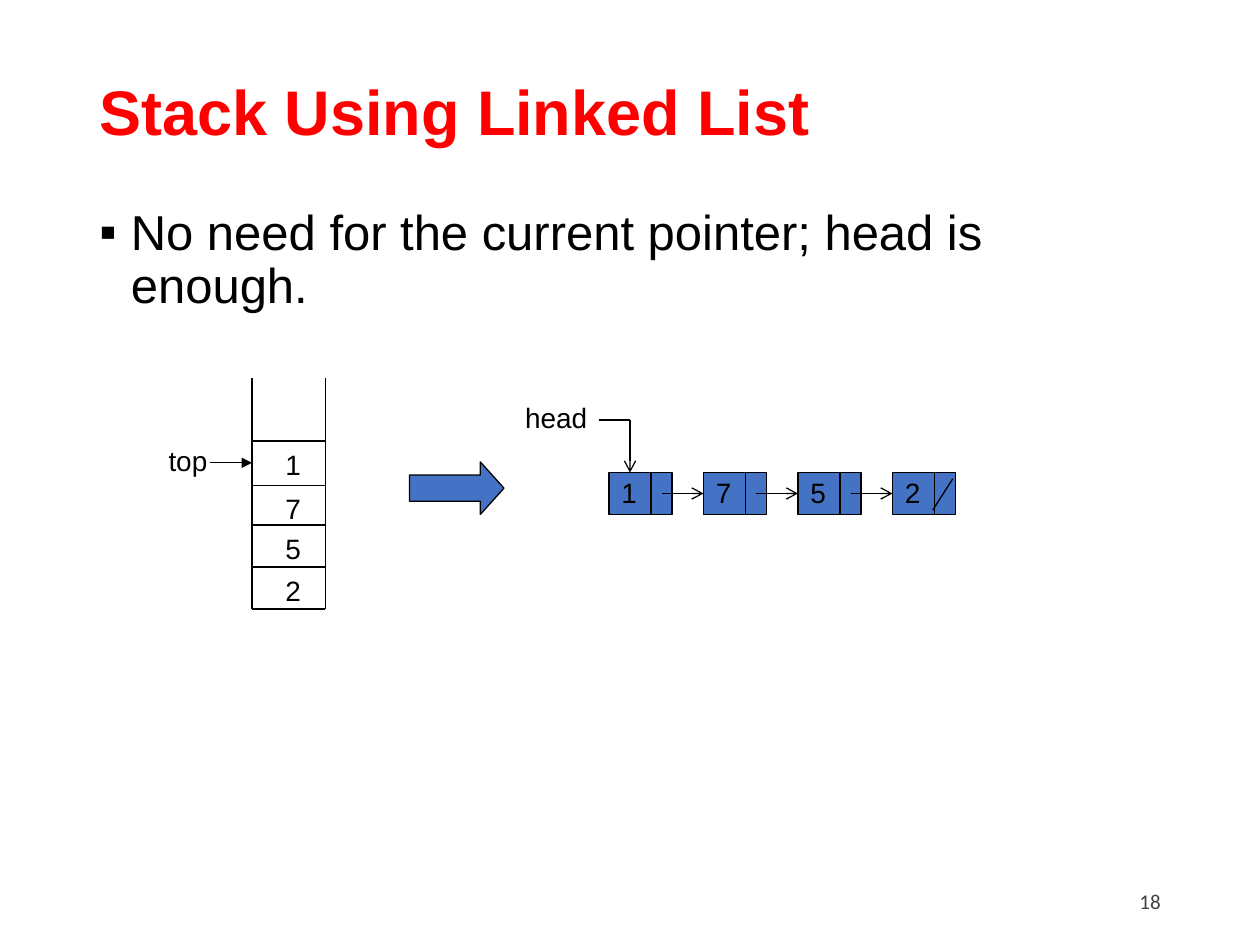
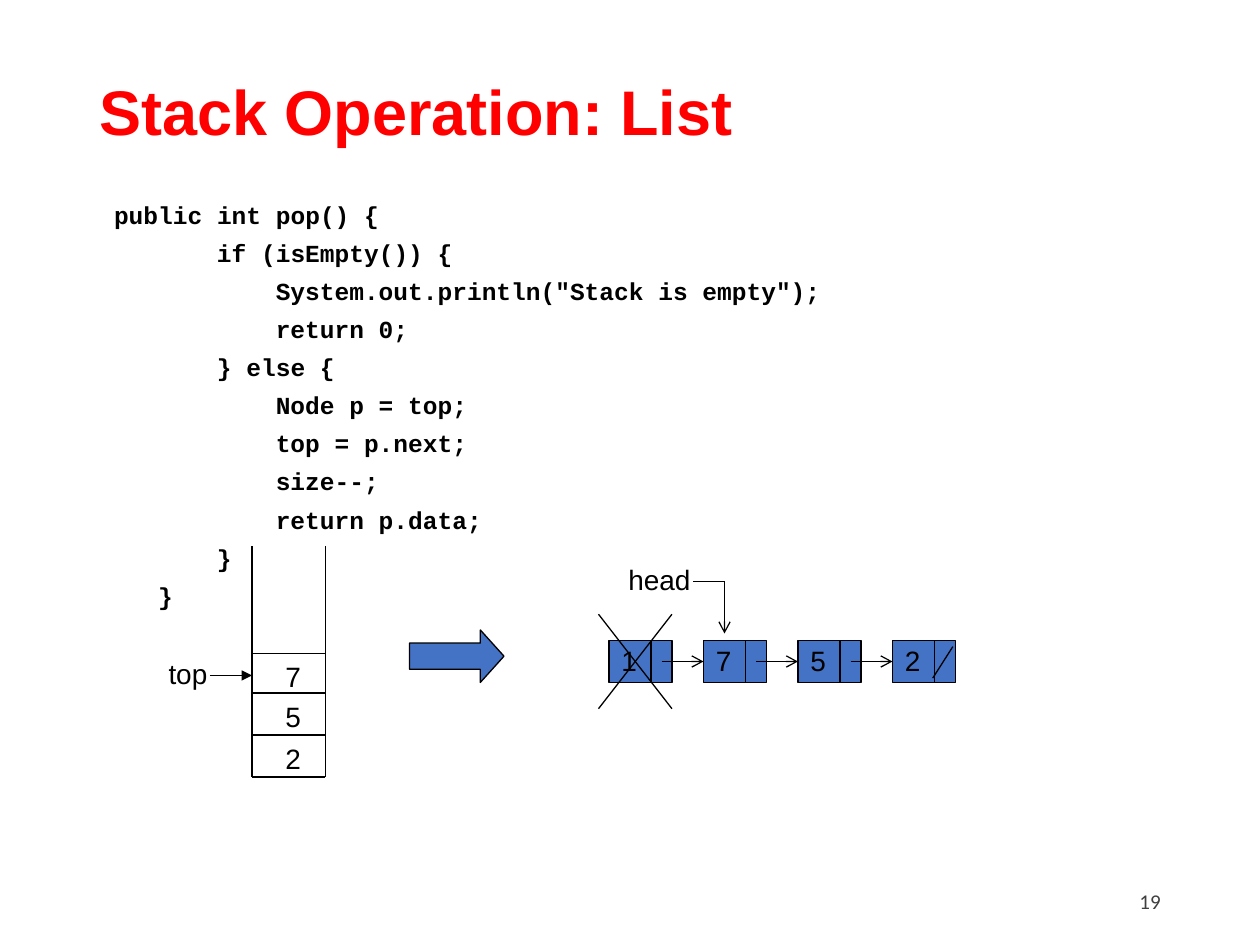
"""Builds two slides showing a stack and its linked list form."""
from lxml.etree import SubElement
from pptx import Presentation
from pptx.dml.color import RGBColor
from pptx.enum.shapes import MSO_CONNECTOR, MSO_SHAPE
from pptx.enum.text import MSO_ANCHOR, PP_ALIGN
from pptx.oxml.ns import qn
from pptx.util import Pt

COLORS = {"title": "FF0000", "ink": "000000", "node": "4472C4", "number": "404040"}
BODY_FONT, CODE_FONT, NUMBER_FONT = "Arial", "Courier New", "Calibri"

LIST_VALUES = ["1", "7", "5", "2"]
CELL_TOPS = {"1": 36, "7": 61.5, "5": 84, "2": 108}
STACK_LEFT, STACK_RIGHT, STACK_HEIGHT = 144, 186, 132
NODE_LEFT, NODE_STEP, NODE_WIDTH = 348, 54, 36
NODE_TOP, NODE_HEIGHT, NODE_SPLIT = 54, 24, 24
CODE_CHAR_WIDTH = 8.4

BULLET = "No need for the current pointer; head is enough."
CODE = [
    (1, "public int pop() {"),
    (8, "if (isEmpty()) {"),
    (12, 'System.out.println("Stack is empty");'),
    (12, "return 0;"),
    (8, "} else {"),
    (12, "Node p = top;"),
    (12, "top = p.next;"),
    (12, "size--;"),
    (12, "return p.data;"),
    (8, "}"),
    (4, "}"),
]
SLIDES = [
    {"title": "Stack Using Linked List", "number": "18", "bullet": BULLET,
     "diagram_top": 216, "popped": 0,
     "head": {"label_left": 293, "line_y": 24, "tip_y": 54}},
    {"title": "Stack Operation: List", "number": "19", "code": CODE,
     "diagram_top": 312, "popped": 1,
     "head": {"label_left": 352, "line_y": 20.5, "tip_y": 50}},
]


def color(name):
    return RGBColor.from_string(COLORS[name])


def add_box(page, left, top, width, height, anchor=MSO_ANCHOR.TOP, wrap=True):
    box = page.shapes.add_textbox(Pt(left), Pt(top), Pt(width), Pt(height))
    box.text_frame.word_wrap = wrap
    box.text_frame.vertical_anchor = anchor
    return box.text_frame


def write(para, text, size, font=BODY_FONT, ink="ink", bold=False, spacing=None):
    para.text = text
    para.font.size = Pt(size)
    para.font.name = font
    para.font.bold = bold
    para.font.color.rgb = color(ink)
    if spacing:
        para.line_spacing = spacing


def add_label(page, text, left, top, width=23.3):
    frame = add_box(page, left, top, width, 26.6, wrap=False)
    write(frame.paragraphs[0], text, 16)


def add_line(page, x1, y1, x2, y2, arrow=None):
    line = page.shapes.add_connector(
        MSO_CONNECTOR.STRAIGHT, Pt(x1), Pt(y1), Pt(x2), Pt(y2))
    line.line.color.rgb = color("ink")
    line.line.width = Pt(0.75)
    if arrow:
        SubElement(line.line._get_or_add_ln(), qn("a:tailEnd"), type=arrow)
    SubElement(line._element.spPr, qn("a:effectLst"))


def add_block(page, kind, left, top, width, height):
    block = page.shapes.add_shape(kind, Pt(left), Pt(top), Pt(width), Pt(height))
    block.shadow.inherit = False
    block.fill.solid()
    block.fill.fore_color.rgb = color("node")
    block.line.color.rgb = color("ink")
    block.line.width = Pt(0.75)
    return block


def add_bullet(frame, text):
    para = frame.paragraphs[0]
    write(para, text, 28, spacing=0.9)
    para.space_before = Pt(10)
    properties = para._p.get_or_add_pPr()
    properties.set("marL", str(Pt(18)))
    properties.set("indent", str(-Pt(18)))
    SubElement(properties, qn("a:buFont"), typeface=BODY_FONT)
    SubElement(properties, qn("a:buChar"), char="▪")


def add_code(frame, lines):
    for index, (column, text) in enumerate(lines):
        para = frame.add_paragraph() if index else frame.paragraphs[0]
        write(para, text, 14, CODE_FONT, bold=True, spacing=0.7)
        para.space_before = Pt(10)
        para._p.get_or_add_pPr().set("marL", str(Pt(column * CODE_CHAR_WIDTH)))


def add_stack(page, top, values):
    bottom = top + STACK_HEIGHT
    for x in (STACK_LEFT, STACK_RIGHT):
        add_line(page, x, top, x, bottom)
    add_line(page, STACK_LEFT, bottom, STACK_RIGHT, bottom)
    for value in values:
        y = top + CELL_TOPS[value]
        add_line(page, STACK_LEFT, y, STACK_RIGHT, y)
        add_label(page, value, 156, y)
    pointer_y = top + CELL_TOPS[values[0]] + 12.5
    add_label(page, "top", 89.2, pointer_y - 14.4, 36.7)
    add_line(page, 120, pointer_y, STACK_LEFT, pointer_y, "triangle")


def add_list(page, top):
    y = top + NODE_TOP
    middle = y + NODE_HEIGHT / 2
    for index, value in enumerate(LIST_VALUES):
        x = NODE_LEFT + index * NODE_STEP
        add_block(page, MSO_SHAPE.RECTANGLE, x, y, NODE_WIDTH, NODE_HEIGHT)
        add_line(page, x + NODE_SPLIT, y, x + NODE_SPLIT, y + NODE_HEIGHT)
        add_label(page, value, x, y - 2)
        if index < len(LIST_VALUES) - 1:
            add_line(page, x + 30, middle, x + NODE_STEP, middle, "arrow")
        else:
            add_line(page, x + 34.5, y + 3.5, x + 23, y + 21.5)


def add_head(page, top, first, head):
    x = NODE_LEFT + first * NODE_STEP
    y = top + head["line_y"]
    add_label(page, "head", head["label_left"], y - 14.4, 49.7)
    add_line(page, x - 6, y, x + 12, y)
    add_line(page, x + 12, y, x + 12, top + head["tip_y"], "arrow")


def add_cross(page, top, index):
    left = NODE_LEFT + index * NODE_STEP - 6
    right = left + NODE_WIDTH + 6
    add_line(page, right, top + 39, left, top + 93)
    add_line(page, left, top + 39, right, top + 93)


def add_diagram(page, content):
    top, popped = content["diagram_top"], content["popped"]
    add_stack(page, top, LIST_VALUES[popped:])
    arrow = add_block(page, MSO_SHAPE.RIGHT_ARROW, 234, top + 48, 54, 30)
    arrow.adjustments[0], arrow.adjustments[1] = 0.5, 0.45
    add_list(page, top)
    add_head(page, top, popped, content["head"])
    for index in range(popped):
        add_cross(page, top, index)


def add_page(deck, content):
    page = deck.slides.add_slide(deck.slide_layouts[6])
    title = add_box(page, 49.7, 37.4, 620.6, 56.9, MSO_ANCHOR.MIDDLE)
    write(title.paragraphs[0], content["title"], 36, ink="title", bold=True, spacing=0.9)
    body = add_box(page, 49.7, 115.2, 620.6, 371.5)
    if "code" in content:
        add_code(body, content["code"])
    else:
        add_bullet(body, content["bullet"])
    add_diagram(page, content)
    number = add_box(page, 508.3, 500.4, 162, 28.8, MSO_ANCHOR.MIDDLE).paragraphs[0]
    write(number, content["number"], 12, NUMBER_FONT, "number")
    number.alignment = PP_ALIGN.RIGHT


def main():
    deck = Presentation()
    deck.slide_width, deck.slide_height = Pt(720), Pt(540)
    for content in SLIDES:
        add_page(deck, content)
    deck.save("out.pptx")


if __name__ == "__main__":
    main()
